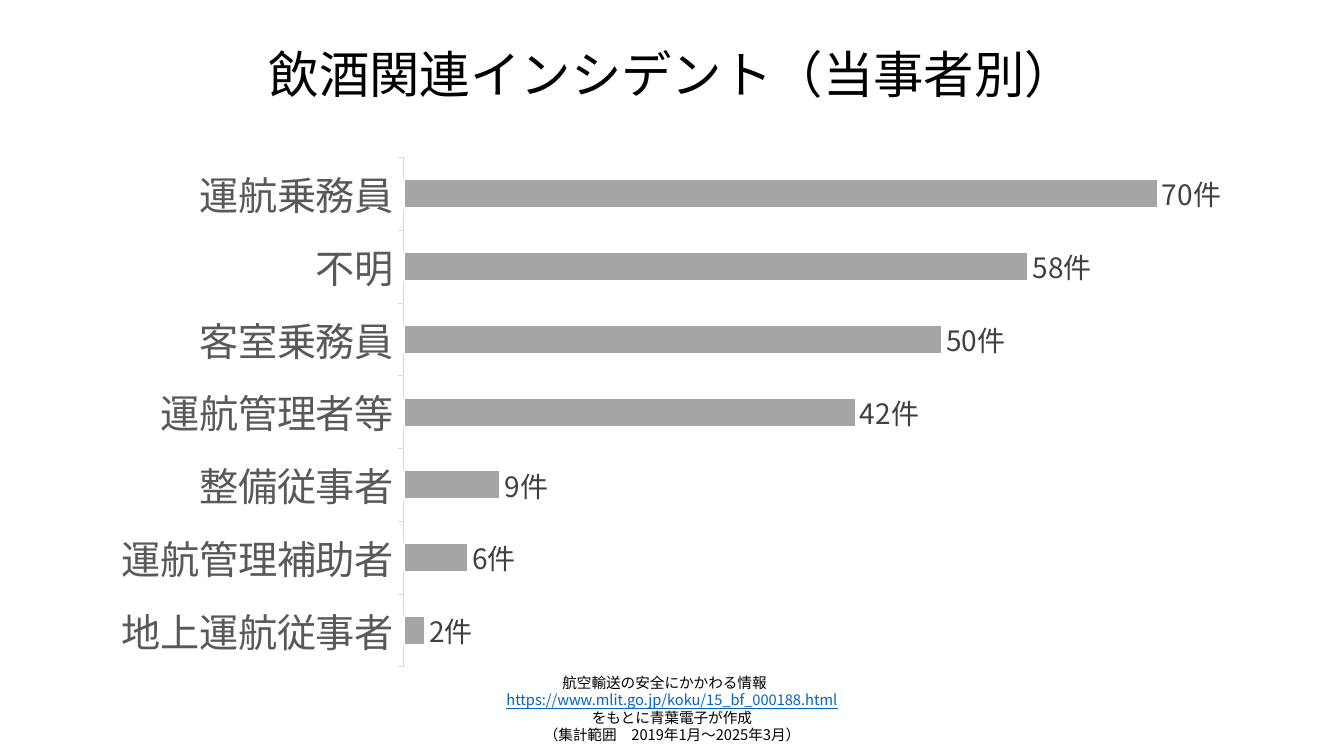
from dataclasses import dataclass

from lxml import etree
from pptx import Presentation
from pptx.chart.data import CategoryChartData
from pptx.dml.color import RGBColor
from pptx.enum.chart import XL_CHART_TYPE as ChartType
from pptx.enum.chart import XL_LABEL_POSITION as LabelPosition
from pptx.enum.chart import XL_TICK_MARK as TickMark
from pptx.enum.text import MSO_ANCHOR, MSO_AUTO_SIZE, PP_ALIGN
from pptx.oxml import parse_xml
from pptx.oxml.ns import nsdecls, qn
from pptx.util import Pt


@dataclass(frozen=True)
class Theme:
    font: str = "Noto Sans CJK JP"
    text: str = "000000"
    category: str = "595959"
    label: str = "404040"
    link: str = "0563C1"
    bar: str = "A5A5A5"
    bar_edge: str = "FFFFFF"
    axis: str = "D9D9D9"
    title_size: float = 36
    category_size: float = 28
    label_size: float = 20
    source_size: float = 10.5


THEME = Theme()
COUNT_FORMAT = '#0"件"'
INCIDENTS = {
    "地上運航従事者": 2,
    "運航管理補助者": 6,
    "整備従事者": 9,
    "運航管理者等": 42,
    "客室乗務員": 50,
    "不明": 58,
    "運航乗務員": 70,
}


def style_font(font, size, color):
    """Set size, colour and typeface, for Latin and East Asian text alike."""
    font.size = Pt(size)
    font.color.rgb = RGBColor.from_string(color)
    font.name = THEME.font
    etree.SubElement(font._rPr, qn("a:ea"), typeface=THEME.font)


def style_line(line, color, width):
    line.color.rgb = RGBColor.from_string(color)
    line.width = Pt(width)


def place(shape, left, top, width, height):
    shape.left, shape.top = Pt(left), Pt(top)
    shape.width, shape.height = Pt(width), Pt(height)


def set_title(slide, text):
    title = slide.shapes.title
    place(title, 66, 30, 828, 51)
    title.text_frame.text = text
    title.text_frame.vertical_anchor = MSO_ANCHOR.MIDDLE
    heading = title.text_frame.paragraphs[0]
    heading.alignment = PP_ALIGN.CENTER
    heading.line_spacing = 0.9
    style_font(heading.runs[0].font, THEME.title_size, THEME.text)


def fix_plot_area(chart, x, y, w, h):
    """Fix the inner plot area, in fractions of the chart frame."""
    plot_area = chart._chartSpace.chart.plotArea
    for layout in plot_area.findall(qn("c:layout")):
        plot_area.remove(layout)
    plot_area.insert(0, parse_xml(
        f'<c:layout {nsdecls("c")}><c:manualLayout>'
        '<c:layoutTarget val="inner"/><c:xMode val="edge"/><c:yMode val="edge"/>'
        f'<c:x val="{x}"/><c:y val="{y}"/><c:w val="{w}"/><c:h val="{h}"/>'
        '</c:manualLayout></c:layout>'))


def add_incident_chart(slide, incidents):
    counts = CategoryChartData(number_format=COUNT_FORMAT)
    counts.categories = list(incidents)
    counts.add_series("Series 1", list(incidents.values()))
    chart = slide.shapes.add_chart(
        ChartType.BAR_CLUSTERED, Pt(66), Pt(105), Pt(855), Pt(379), counts).chart
    chart.has_title = False
    chart.has_legend = False
    style_font(chart.font, THEME.category_size, THEME.text)
    fix_plot_area(chart, 0.26, 0.02, 0.72, 0.96)

    parties = chart.category_axis
    parties.major_tick_mark = TickMark.OUTSIDE
    parties.has_major_gridlines = False
    style_line(parties.format.line, THEME.axis, 0.75)
    style_font(parties.tick_labels.font, THEME.category_size, THEME.category)

    scale = chart.value_axis
    scale.visible = False
    scale.has_major_gridlines = False
    scale.minimum_scale, scale.maximum_scale = 0, 80

    bars = chart.plots[0]
    bars.gap_width = 150
    bars.vary_by_categories = False
    series = bars.series[0]
    series.format.fill.solid()
    series.format.fill.fore_color.rgb = RGBColor.from_string(THEME.bar)
    style_line(series.format.line, THEME.bar_edge, 1.5)

    labels = series.data_labels
    labels.show_value = True
    labels.number_format = COUNT_FORMAT
    labels.number_format_is_linked = False
    labels.position = LabelPosition.OUTSIDE_END
    style_font(labels.font, THEME.label_size, THEME.label)


def add_source_note(slide, heading, address, *remarks):
    note = slide.shapes.add_textbox(Pt(240), Pt(477.5), Pt(480), Pt(58)).text_frame
    note.word_wrap = True
    note.auto_size = MSO_AUTO_SIZE.SHAPE_TO_FIT_TEXT
    note.text = heading
    details = note.add_paragraph()
    details.text = "\n".join((address, *remarks))
    for paragraph in note.paragraphs:
        paragraph.alignment = PP_ALIGN.CENTER
        for run in paragraph.runs:
            is_address = run.text == address
            style_font(run.font, THEME.source_size,
                       THEME.link if is_address else THEME.text)
            run.font.underline = is_address


def main():
    deck = Presentation()
    deck.slide_width, deck.slide_height = Pt(960), Pt(540)
    slide = deck.slides.add_slide(deck.slide_layouts[5])
    set_title(slide, "飲酒関連インシデント（当事者別）")
    add_incident_chart(slide, INCIDENTS)
    add_source_note(
        slide,
        "航空輸送の安全にかかわる情報　",
        "https://www.mlit.go.jp/koku/15_bf_000188.html",
        "をもとに青葉電子が作成",
        "（集計範囲　2019年1月～2025年3月）",
    )
    deck.save("out.pptx")


if __name__ == "__main__":
    main()
